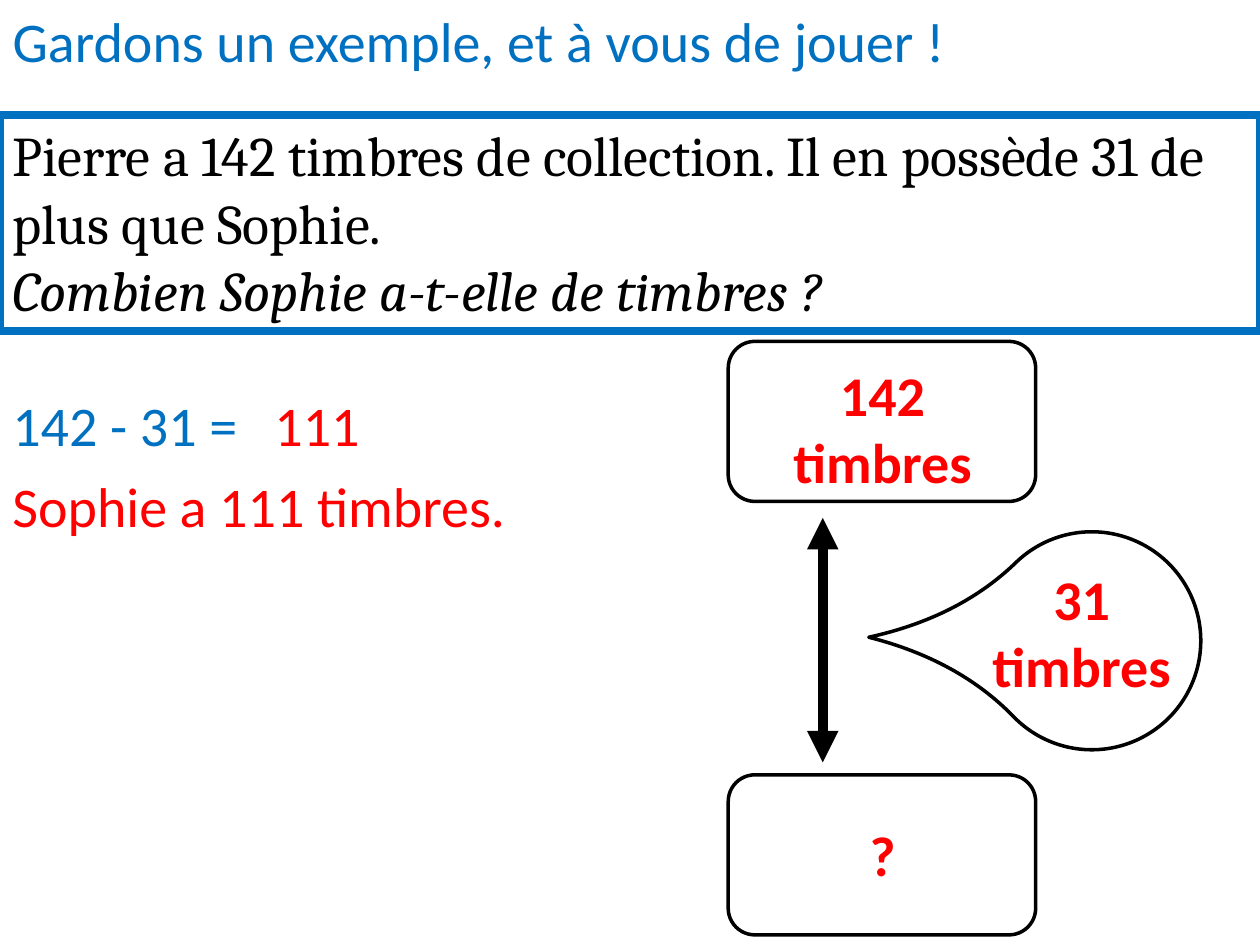
from pptx import Presentation
from pptx.dml.color import RGBColor
from pptx.enum.shapes import MSO_CONNECTOR, MSO_SHAPE as Shape
from pptx.enum.text import MSO_ANCHOR as Anchor, MSO_AUTO_SIZE as AutoSize, PP_ALIGN as Align
from pptx.oxml.ns import qn
from pptx.util import Inches, Pt
from lxml.etree import SubElement

BLUE, RED, BLACK = "0070C0", "FF0000", "000000"
LINE_HEIGHT = 0.64


def rgb(value):
    return RGBColor.from_string(value)


def place(item, left, top, width, height):
    item.left, item.top = Inches(left), Inches(top)
    item.width, item.height = Inches(width), Inches(height)


def write(item, lines, color, font="Calibri", bold=False, align=Align.LEFT):
    frame = item.text_frame
    frame.word_wrap = True
    frame.auto_size = AutoSize.NONE
    frame.vertical_anchor = Anchor.TOP
    frame.text = "\n".join(lines)
    for paragraph in frame.paragraphs:
        paragraph.alignment = align
        paragraph.font.name = font
        paragraph.font.size = Pt(32)
        paragraph.font.bold = bold
        paragraph.font.color.rgb = rgb(color)


def add_text(slide, box, text, color, **style):
    label = slide.shapes.add_textbox(*map(Inches, box))
    write(label, [text], color, **style)


def add_outline(slide, kind, box, color=BLACK, weight=2):
    outline = slide.shapes.add_shape(kind, *map(Inches, box))
    outline.shadow.inherit = False
    outline.fill.background()
    outline.line.color.rgb = rgb(color)
    outline.line.width = Pt(weight)
    return outline


def add_double_arrow(slide, x, top, bottom):
    arrow = slide.shapes.add_connector(
        MSO_CONNECTOR.STRAIGHT, Inches(x), Inches(top), Inches(x), Inches(bottom))
    arrow.line.color.rgb = rgb(BLACK)
    arrow.line.width = Pt(6)
    line = arrow.line._get_or_add_ln()
    for end in ("a:headEnd", "a:tailEnd"):
        SubElement(line, qn(end), type="triangle")
    SubElement(arrow._element.spPr, qn("a:effectLst"))


def main():
    deck = Presentation()
    deck.slide_width, deck.slide_height = Inches(10), Inches(7.5)
    slide = deck.slides.add_slide(deck.slide_layouts[5])

    # Title
    title = slide.shapes.title
    place(title, 0, 0, 10, LINE_HEIGHT)
    write(title, ["Gardons un exemple, et à vous de jouer !"], BLUE)

    # Problem statement
    problem = add_outline(slide, Shape.RECTANGLE, (0, 0.91, 10, 1.72), BLUE, 4.5)
    write(problem, [
        "Pierre a 142 timbres de collection. Il en possède 31 de plus que Sophie.",
        "Combien Sophie a-t-elle de timbres ?",
    ], BLACK, font="Cambria")
    problem.text_frame.paragraphs[1].font.italic = True

    # Comparison diagram: two quantities and their difference
    for top in (2.71, 6.15):
        add_outline(slide, Shape.ROUNDED_RECTANGLE, (5.78, top, 2.44, 1.27))
    add_double_arrow(slide, 6.53, 4.11, 6.05)
    difference = add_outline(slide, Shape.TEAR, (7.8, 4.22, 1.73, 1.73))
    difference.adjustments[0] = 1.447
    difference.rotation = 225.9
    for left, top, height, text in (
        (5.94, 2.81, 1.18, "142 timbres"),
        (5.94, 6.46, LINE_HEIGHT, "?"),
        (7.52, 4.43, 1.18, "31 timbres"),
    ):
        add_text(slide, (left, top, 2.13, height), text, RED,
                 bold=True, align=Align.CENTER)

    # Calculation and answer
    for left, top, width, text, color in (
        (0, 3.05, 2.28, "142 - 31 =", BLUE),
        (2.08, 3.05, 2.28, "111", RED),
        (0, 3.69, 5.78, "Sophie a 111 timbres.", RED),
    ):
        add_text(slide, (left, top, width, LINE_HEIGHT), text, color)

    deck.save("out.pptx")


if __name__ == "__main__":
    main()
